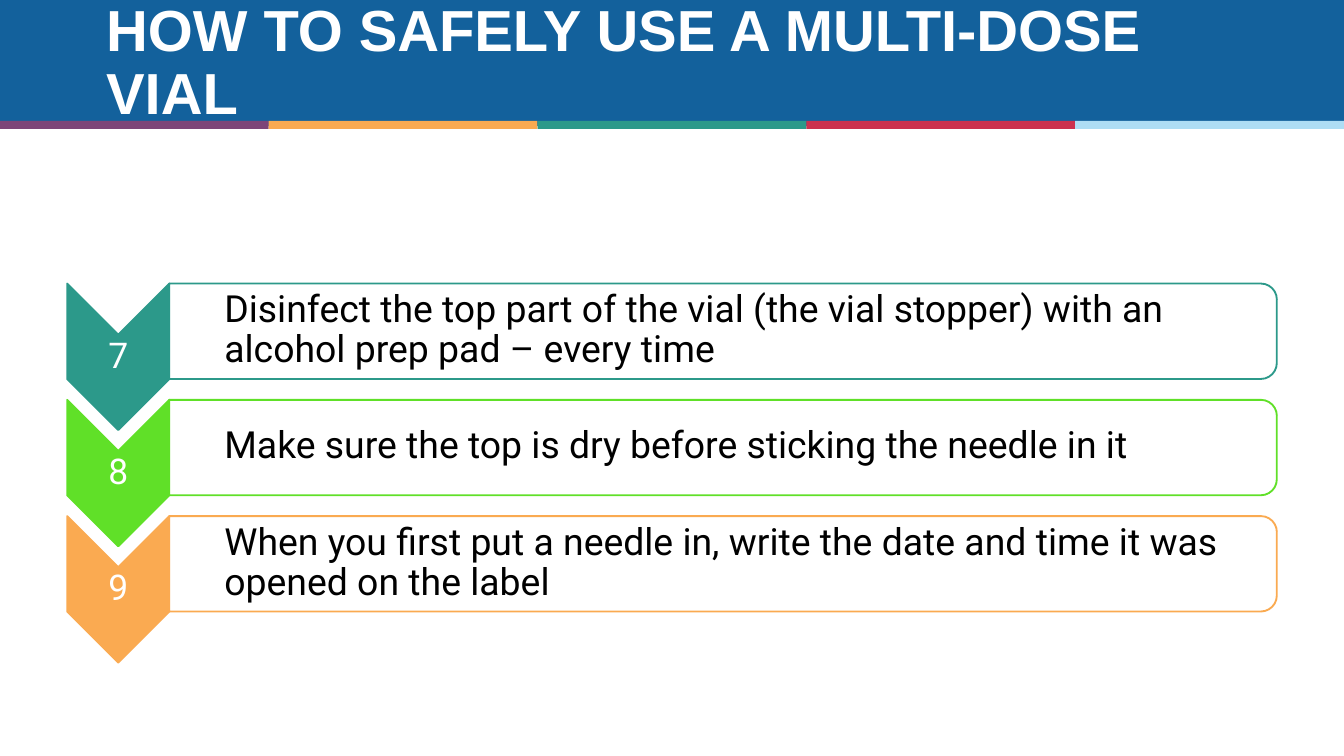
from dataclasses import dataclass

from lxml import etree
from pptx import Presentation
from pptx.dml.color import RGBColor
from pptx.enum import shapes, text
from pptx.oxml.ns import qn
from pptx.util import Inches, Pt


@dataclass(frozen=True)
class Theme:
    blue: str = "13619C"
    purple: str = "7D4578"
    orange: str = "FAAA51"
    teal: str = "2C998A"
    red: str = "CC314E"
    sky: str = "AEDDF4"
    green: str = "60E028"
    white: str = "FFFFFF"
    black: str = "000000"
    title_font: str = "Arial"
    body_font: str = "Roboto"
    title_size: float = 31
    number_size: float = 19
    step_size: float = 20


@dataclass(frozen=True)
class Box:
    left: float
    top: float
    width: float
    height: float

    def lengths(self) -> list:
        return [Inches(v) for v in (self.left, self.top, self.width, self.height)]

    def turned(self) -> "Box":
        """Box that covers this one once rotated by a quarter turn."""
        shift = (self.width - self.height) / 2
        return Box(self.left + shift, self.top - shift, self.height, self.width)


@dataclass(frozen=True)
class Step:
    number: int
    wording: str
    color: str


T = Theme()
SHAPE = shapes.MSO_SHAPE
STRIPES = (T.purple, T.orange, T.teal, T.red, T.sky)
STEPS = (
    Step(7, "Disinfect the top part of the vial (the vial stopper) with an "
            "alcohol prep pad – every time", T.teal),
    Step(8, "Make sure the top is dry before sticking the needle in it", T.green),
    Step(9, "When you first put a needle in, write the date and time it was "
            "opened on the label", T.orange),
)
FIRST_TOP, STEP_PITCH = 2.1, 0.865


def rgb(color: str) -> RGBColor:
    return RGBColor.from_string(color)


def add_shape(s, kind, box: Box, fill: str, line: str | None = None, rotation=0):
    sp = s.shapes.add_shape(kind, *box.lengths())
    sp.shadow.inherit = False
    sp.rotation = rotation
    sp.fill.solid()
    sp.fill.fore_color.rgb = rgb(fill)
    if line:
        sp.line.color.rgb = rgb(line)
        sp.line.width = Pt(1)
    else:
        sp.line.fill.background()
    return sp


def write(sp, wording: str, font: str, size: float, color: str,
          align=text.PP_ALIGN.LEFT, bold=False) -> None:
    tf = sp.text_frame
    tf.word_wrap = True
    tf.auto_size = text.MSO_AUTO_SIZE.NONE
    tf.vertical_anchor = text.MSO_ANCHOR.MIDDLE
    p = tf.paragraphs[0]
    p.text = wording
    p.alignment = align
    p.line_spacing = 0.9
    p.font.name, p.font.size, p.font.bold = font, Pt(size), bold
    p.font.color.rgb = rgb(color)


def add_text(s, box: Box, wording: str, size: float, color: str,
             align=text.PP_ALIGN.LEFT, inset=0.01) -> None:
    sp = s.shapes.add_textbox(*box.lengths())
    tf = sp.text_frame
    tf.margin_left = Inches(inset)
    tf.margin_top = tf.margin_right = tf.margin_bottom = Inches(0.01)
    write(sp, wording, T.body_font, size, color, align)


def add_header(s, wording: str) -> None:
    add_shape(s, SHAPE.RECTANGLE, Box(0, 0, 10, 0.94), T.blue)
    for i, color in enumerate(STRIPES):
        add_shape(s, SHAPE.RECTANGLE, Box(2 * i, 0.9, 2, 0.06), color)
    title = s.shapes.title
    title.left, title.top, title.width, title.height = Box(0.69, 0.19, 8.62, 0.58).lengths()
    write(title, wording, T.title_font, T.title_size, T.white, bold=True)
    # Bring the title in front of the band
    s.shapes._spTree.append(title._element)


def add_step(s, step: Step, top: float) -> None:
    # Numbered chevron pointing down
    add_shape(s, SHAPE.CHEVRON, Box(0.5, top + 0.01, 0.76, 1.09).turned(),
              step.color, step.color, rotation=90)
    add_text(s, Box(0.5, top + 0.39, 0.76, 0.33), str(step.number),
             T.number_size, T.white, text.PP_ALIGN.CENTER)
    # Outlined frame, rounded on the right
    frame = add_shape(s, SHAPE.ROUND_2_SAME_RECTANGLE,
                      Box(1.26, top + 0.01, 8.24, 0.71).turned(),
                      T.white, step.color, rotation=90)
    fill_color = frame._element.spPr.find(qn("a:solidFill"))[0]
    etree.SubElement(fill_color, qn("a:alpha"), val="90000")
    add_text(s, Box(1.26, top + 0.04, 8.2, 0.64), step.wording,
             T.step_size, T.black, inset=0.41)


def main() -> None:
    prs = Presentation()
    # Widescreen, 16 by 9
    prs.slide_width, prs.slide_height = Inches(10), Inches(10 * 9 / 16)
    s = prs.slides.add_slide(prs.slide_layouts[5])
    add_header(s, "HOW TO SAFELY USE A MULTI-DOSE VIAL")
    for i, step in enumerate(STEPS):
        add_step(s, step, FIRST_TOP + i * STEP_PITCH)
    prs.save("out.pptx")


if __name__ == "__main__":
    main()
